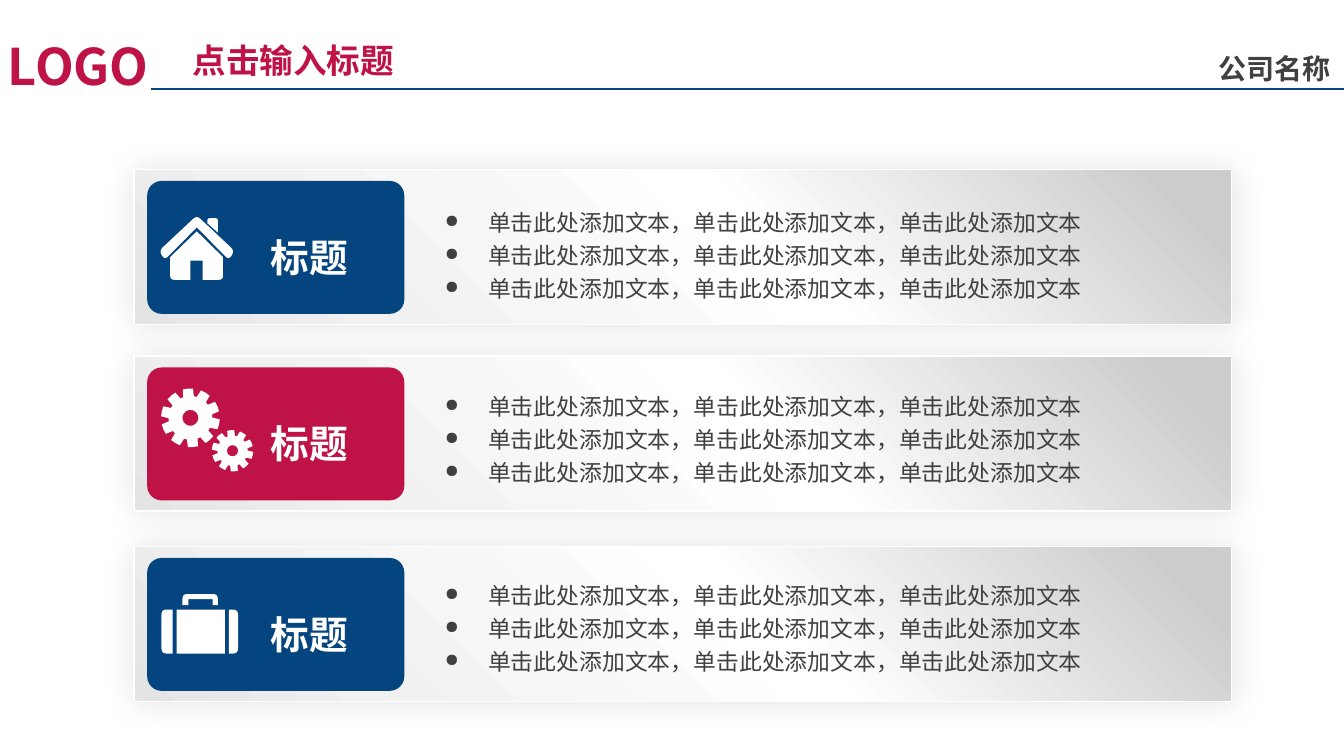
from math import cos, sin, radians
from lxml.etree import SubElement
from pptx import Presentation
from pptx.dml.color import RGBColor
from pptx.enum.shapes import MSO_CONNECTOR, MSO_SHAPE
from pptx.enum.text import MSO_ANCHOR, MSO_AUTO_SIZE, PP_ALIGN
from pptx.oxml.ns import qn
from pptx.util import Cm, Pt

# Content
FONT = "Noto Sans CJK SC"
BLUE, RED, GREY, WHITE = "04447F", "BF1347", "404040", "FFFFFF"
TITLE = "点击输入标题"
LOGO = "LOGO"
FIRM = "公司名称"
LABEL = "标题"
LINES = ["单击此处添加文本，单击此处添加文本，单击此处添加文本"] * 3
# Bar top, text top, card colour, icon name
ROWS = [
    (4.27, 4.95, BLUE, "house"),
    (8.97, 9.58, RED, "gears"),
    (13.77, 14.35, BLUE, "case"),
]
STOPS = [(6, "CCCCCC"), (43, "FFFFFF"), (80, "F1F1F1"), (100, "E4E4E4")]


# Icon outlines in cm from the card corner: (x, y) or (x, y, corner radius)
def ring(x, y, r, degs):
    return [(x + r * cos(radians(d)), y + r * sin(radians(d))) for d in degs]


def gear(x, y, tip, root, hole, teeth=10, turn=13):
    rim = []
    for i in range(teeth):
        mid = turn + i * 360 / teeth
        rim += ring(x, y, root, [mid - 14])
        rim += ring(x, y, tip, [mid - 10, mid, mid + 10])
        rim += ring(x, y, root, [mid + 14])
    return [rim, ring(x, y, hole, range(0, 360, 15))]


ICONS = {
    "house": [[
        [(1.52, 0.94, 0.05), (1.78, 0.94, 0.05), (1.78, 1.3), (1.52, 1.07)],
        [(1.25, 0.87, 0.12), (2.2, 1.76, 0.12), (2.06, 1.99, 0.12),
         (1.25, 1.17), (0.44, 1.99, 0.12), (0.3, 1.76, 0.12)],
        [(1.25, 1.27), (1.91, 1.92), (1.91, 2.49, 0.1), (1.4, 2.49),
         (1.4, 2.01), (1.09, 2.01), (1.09, 2.49), (0.58, 2.49, 0.1),
         (0.58, 1.92)],
    ]],
    "gears": [gear(1.09, 1.27, 0.74, 0.55, 0.2),
              gear(2.15, 2.1, 0.52, 0.38, 0.14)],
    "case": [[
        [(0.89, 1.19), (0.89, 0.91, 0.12), (1.78, 0.91, 0.12), (1.78, 1.19),
         (1.65, 1.19), (1.65, 1.04), (1.04, 1.04), (1.04, 1.19)],
        [(0.36, 1.3, 0.13), (0.64, 1.3), (0.64, 2.41), (0.36, 2.41, 0.13)],
        [(0.74, 1.3), (1.96, 1.3), (1.96, 2.41), (0.74, 2.41)],
        [(2.06, 1.3), (2.29, 1.3, 0.13), (2.29, 2.41, 0.13), (2.06, 2.41)],
    ]],
}


# Helpers
def rgb(code):
    return RGBColor.from_string(code)


def write(para, text, size, color, bold=False):
    run = para.add_run()
    run.text = text
    font = run.font
    font.size, font.bold, font.name = Pt(size), bold, FONT
    font.color.rgb = rgb(color)
    SubElement(font._element, qn("a:ea"), typeface=FONT)


def frame(shape, box, pad, wrap=True, anchor=MSO_ANCHOR.TOP):
    shape.left, shape.top, shape.width, shape.height = map(Cm, box)
    text = shape.text_frame
    text.auto_size = MSO_AUTO_SIZE.NONE
    text.word_wrap, text.vertical_anchor = wrap, anchor
    text.margin_left = text.margin_right = Cm(pad)
    text.margin_top = text.margin_bottom = Cm(pad / 2)
    return text


def head(shape, box, text, size, color):
    para = frame(shape, box, 0.2, False, MSO_ANCHOR.MIDDLE).paragraphs[0]
    para.alignment = PP_ALIGN.LEFT
    write(para, text, size, color, True)


def textbox():
    return slide.shapes.add_textbox(0, 0, 0, 0)


def block(kind, *box):
    shape = slide.shapes.add_shape(kind, *map(Cm, box))
    shape.shadow.inherit = False
    return shape


def bend(points):
    """Round each corner that has a radius."""
    out = []
    for i, (x, y, *rad) in enumerate(points):
        if not rad:
            out.append((x, y))
            continue
        ends = []
        for px, py, *_ in (points[i - 1], points[(i + 1) % len(points)]):
            part = rad[0] / ((px - x) ** 2 + (py - y) ** 2) ** 0.5
            ends.append((x + (px - x) * part, y + (py - y) * part))
        (ax, ay), (bx, by) = ends
        for t in (0, 0.25, 0.5, 0.75, 1):
            a, c, b = (1 - t) ** 2, 2 * t * (1 - t), t * t
            out.append((a * ax + c * x + b * bx, a * ay + c * y + b * by))
    return out


def draw(paths, left, top):
    paths = [[(Cm(left + x), Cm(top + y)) for x, y in bend(p)] for p in paths]
    pen = slide.shapes.build_freeform(*paths[0][0])
    for i, path in enumerate(paths):
        if i:
            pen.move_to(*path[0])
        pen.add_line_segments(path[1:], close=True)
    icon = pen.convert_to_shape()
    icon.shadow.inherit = False
    icon.fill.solid()
    icon.fill.fore_color.rgb = rgb(WHITE)
    icon.line.fill.background()


def bar(top):
    shape = block(MSO_SHAPE.RECTANGLE, 3.38, top, 27.66, 3.91)
    shape.fill.gradient()
    shape.fill.gradient_angle = 225
    stops = shape._element.spPr.find(".//" + qn("a:gsLst"))
    for old in list(stops):
        stops.remove(old)
    for pos, code in STOPS:
        stop = SubElement(stops, qn("a:gs"), pos=str(pos * 1000))
        SubElement(stop, qn("a:srgbClr"), val=code)
    shape.line.color.rgb = rgb(WHITE)
    shape.line.width = Pt(1)
    glow = SubElement(shape._element.spPr.find(qn("a:effectLst")),
                      qn("a:outerShdw"), blurRad=str(Pt(22)), dist="0",
                      dir="0", algn="ctr", rotWithShape="0")
    tint = SubElement(glow, qn("a:srgbClr"), val="000000")
    SubElement(tint, qn("a:alpha"), val="11000")


def card(left, top, color, icon):
    shape = block(MSO_SHAPE.ROUNDED_RECTANGLE, left, top, 6.48, 3.35)
    shape.adjustments[0] = 0.109
    shape.fill.solid()
    shape.fill.fore_color.rgb = rgb(color)
    shape.line.fill.background()
    box = (left + 2.16, top + 0.97, 3.86, 1.68)
    para = frame(textbox(), box, 0.25).paragraphs[0]
    para.alignment, para.line_spacing = PP_ALIGN.CENTER, 1.2
    write(para, LABEL, 27.6, WHITE, True)
    for paths in ICONS[icon]:
        draw(paths, left, top)


def bullets(top):
    text = frame(textbox(), (10.85, top, 18.14, 2.84), 0.36)
    for i, line in enumerate(LINES):
        para = text.add_paragraph() if i else text.paragraphs[0]
        props = para._p.get_or_add_pPr()
        props.set("marL", str(Cm(1.09)))
        props.set("indent", str(-Cm(1.09)))
        SubElement(props, qn("a:buSzPct"), val="78000")
        SubElement(props, qn("a:buChar"), char="●")
        para.line_spacing = 1.2
        write(para, line, 16.3, GREY)


# Slide
deck = Presentation()
deck.slide_width, deck.slide_height = Cm(33.87), Cm(19.05)
slide = deck.slides.add_slide(deck.slide_layouts[5])

# Header
head(slide.shapes.title, (4.65, 0.91, 5.51, 1.22), TITLE, 24, RED)
head(textbox(), (0, 0.79, 4.17, 1.73), LOGO, 36, RED)
head(textbox(), (30.51, 1.19, 3.23, 1.04), FIRM, 20, GREY)
rule = slide.shapes.add_connector(
    MSO_CONNECTOR.STRAIGHT, Cm(3.81), Cm(2.24), Cm(33.87), Cm(2.24))
rule.line.color.rgb = rgb(BLUE)
rule.line.width = Pt(1)
SubElement(rule._element.spPr, qn("a:effectLst"))

# Rows
for top, start, color, icon in ROWS:
    bar(top)
    card(3.71, top + 0.29, color, icon)
    bullets(start)

deck.save("out.pptx")
